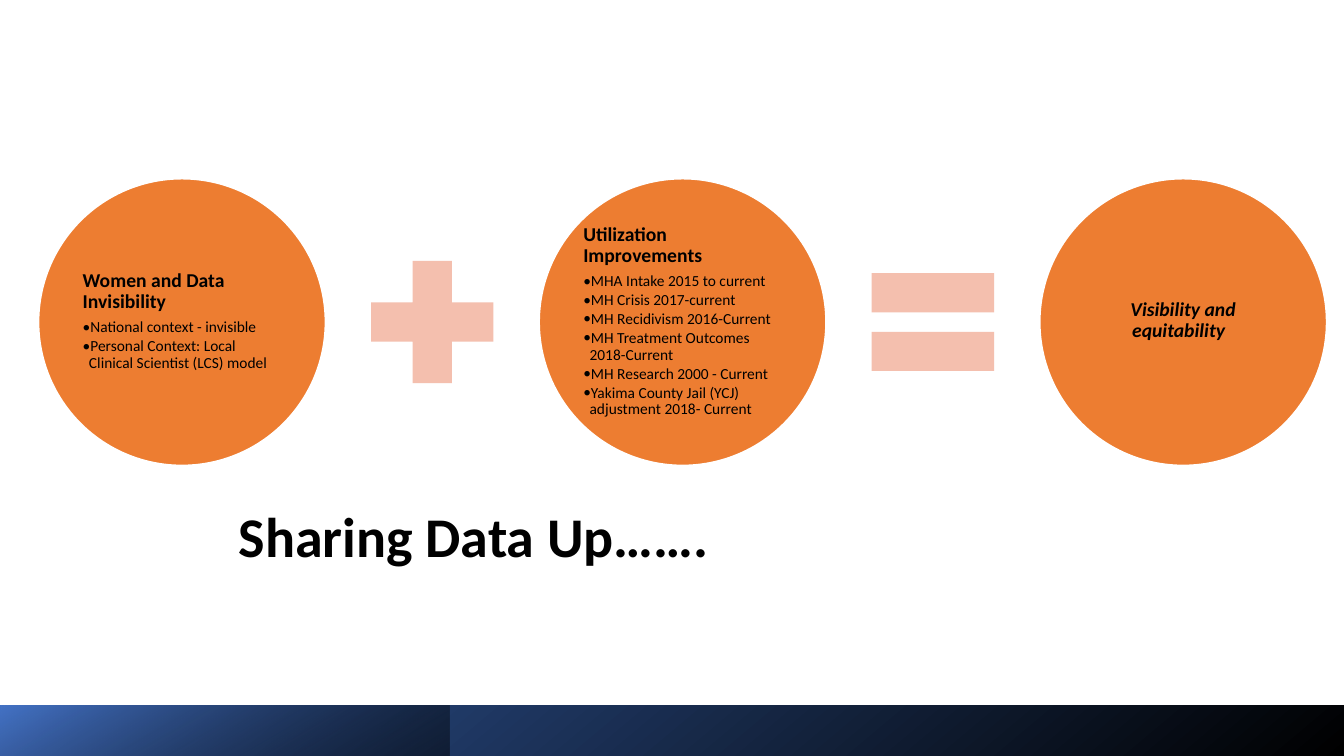
from lxml import etree
from pptx import Presentation
from pptx.dml.color import RGBColor
from pptx.enum.shapes import MSO_SHAPE
from pptx.enum.text import MSO_ANCHOR, PP_ALIGN
from pptx.oxml.ns import qn
from pptx.util import Inches, Pt

TITLE = "Sharing Data Up……."
CIRCLES = [
    ("Women and Data Invisibility", [
        "National context - invisible",
        "Personal Context: Local Clinical Scientist (LCS) model"]),
    ("Utilization Improvements", [
        "MHA Intake 2015 to current",
        "MH Crisis 2017-current ",
        "MH Recidivism 2016-Current",
        "MH Treatment Outcomes 2018-Current ",
        "MH Research 2000 - Current",
        "Yakima County Jail (YCJ) adjustment 2018- Current "]),
    ("Visibility and equitability  ", []),
]
SIGNS = [MSO_SHAPE.MATH_PLUS, MSO_SHAPE.MATH_EQUAL]
# width, angle, (start colour, opacity %), (end colour, position)
BARS = [
    (13.33, 230, ("000000", 100), ("2F5597", 1)),
    (4.46, 240, ("000000", 46), ("4472C4", 0.99)),
]
ORANGE, PINK, WHITE, BLACK = "ED7D31", "F4BFAE", "FFFFFF", "000000"
FONT = "Calibri"
FIRST_LEFT, LAST_LEFT, TOP, DIAMETER = 0.38, 10.31, 1.77, 2.85
SIGN, LABEL, LABEL_TOP = 1.65, 2.01, 2.18
BAR_TOP, BAR_HEIGHT = 7, 0.51
HANG = Pt(4.5)


def rgb(hex_color):
    return RGBColor.from_string(hex_color)


def add_shape(s, kind, x, y, w, h, fill=None, line=None):
    sp = s.shapes.add_shape(kind, Inches(x), Inches(y), Inches(w), Inches(h))
    sp.shadow.inherit = False
    if fill:
        sp.fill.solid()
        sp.fill.fore_color.rgb = rgb(fill)
    if line:
        sp.line.color.rgb = rgb(line)
        sp.line.width = Pt(1.5)
    else:
        sp.line.fill.background()
    return sp


def add_bar(s, width, angle, start, end):
    """Add a footer bar with a two-stop gradient; the angle runs clockwise."""
    sp = add_shape(s, MSO_SHAPE.RECTANGLE, 0, BAR_TOP, width, BAR_HEIGHT)
    sp.fill.gradient()
    sp.fill.gradient_angle = 360 - angle
    first, last = sp.fill.gradient_stops
    first.position, last.position = 0, end[1]
    first.color.rgb, last.color.rgb = rgb(start[0]), rgb(end[0])
    if start[1] < 100:
        clr = next(sp._element.iter(qn("a:srgbClr")))
        etree.SubElement(clr, qn("a:alpha")).set("val", str(start[1] * 1000))


def add_box(s, x, y, w, h, anchor, inset=None):
    tf = s.shapes.add_textbox(Inches(x), Inches(y), Inches(w), Inches(h)).text_frame
    tf.word_wrap = True
    tf.vertical_anchor = anchor
    if inset is not None:
        tf.margin_left = tf.margin_right = Inches(inset)
        tf.margin_top = tf.margin_bottom = Inches(inset)
    return tf


def add_text(p, text, size, after, bold=False, italic=False, align=PP_ALIGN.LEFT, bullet=False):
    p.alignment = align
    p.line_spacing = 0.9
    p.space_after = Pt(after)
    if bullet:
        p.level = 1
        pPr = p._p.get_or_add_pPr()
        pPr.set("marL", str(HANG))
        pPr.set("indent", str(-HANG))
        etree.SubElement(pPr, qn("a:buFont")).set("typeface", FONT)
        etree.SubElement(pPr, qn("a:buChar")).set("char", "•")
    r = p.add_run()
    r.text = text
    r.font.name, r.font.size = FONT, Pt(size)
    r.font.bold, r.font.italic = bold, italic
    r.font.color.rgb = rgb(BLACK)


prs = Presentation()
prs.slide_width, prs.slide_height = Inches(13.33), Inches(7.5)
s = prs.slides.add_slide(prs.slide_layouts[6])

title = add_box(s, 2.27, 4.44, 11.06, 1.26, MSO_ANCHOR.BOTTOM)
add_text(title.paragraphs[0], TITLE, 40, 6, bold=True)
for bar in BARS:
    add_bar(s, *bar)

pitch = (LAST_LEFT - FIRST_LEFT) / (len(CIRCLES) - 1)
for i, (heading, points) in enumerate(CIRCLES):
    x = FIRST_LEFT + i * pitch
    add_shape(s, MSO_SHAPE.OVAL, x, TOP, DIAMETER, DIAMETER, ORANGE, WHITE)
    tf = add_box(s, x + (DIAMETER - LABEL) / 2, LABEL_TOP, LABEL, LABEL,
                 MSO_ANCHOR.MIDDLE, 0.02)
    add_text(tf.paragraphs[0], heading, 14, 4.9, bold=True, italic=not points,
             align=PP_ALIGN.LEFT if points else PP_ALIGN.CENTER)
    for point in points:
        add_text(tf.add_paragraph(), point, 11, 1.65, bullet=True)
    if i < len(SIGNS):
        add_shape(s, SIGNS[i], x + (DIAMETER + pitch - SIGN) / 2,
                  TOP + (DIAMETER - SIGN) / 2, SIGN, SIGN, PINK)

prs.save("out.pptx")
